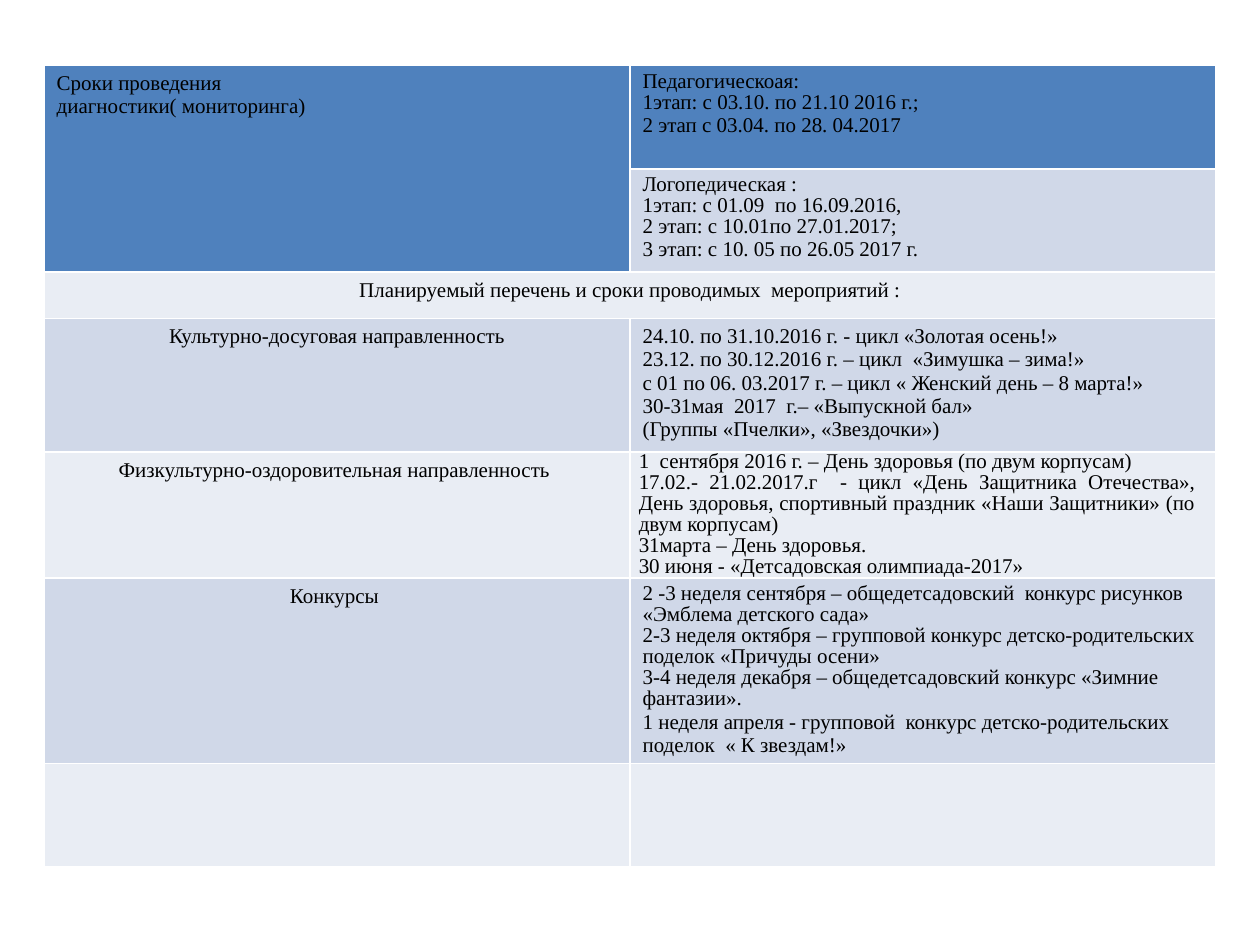
import pptx
import pptx.dml.color
import pptx.enum.text
import pptx.util

Inches = pptx.util.Inches
Pt = pptx.util.Pt
ALIGN = pptx.enum.text.PP_ALIGN
LEFT, CENTER, JUSTIFY = ALIGN.LEFT, ALIGN.CENTER, ALIGN.JUSTIFY
EXACT = Pt(12)
HEADER, DARK_BAND, LIGHT_BAND = "4F81BD", "D0D8E8", "E9EDF4"


def color(hex_string):
    return pptx.dml.color.RGBColor.from_string(hex_string)


presentation = pptx.Presentation()
presentation.slide_width = Inches(10)
presentation.slide_height = Inches(7.5)
slide = presentation.slides.add_slide(presentation.slide_layouts[6])

row_heights = [0.82, 0.82, 0.37, 1.06, 0.82, 0.82, 0.82]
# The default table style supplies the white borders and the thick header rule.
table = slide.shapes.add_table(
    len(row_heights), 2, Inches(0.35), Inches(0.52), Inches(9.3), Inches(sum(row_heights))
).table
for column in table.columns:
    column.width = Inches(4.65)
for row, height in zip(table.rows, row_heights):
    row.height = Inches(height)

for row_index in range(len(row_heights)):
    band = DARK_BAND if row_index % 2 else LIGHT_BAND
    for cell in table.rows[row_index].cells:
        cell.fill.solid()
        cell.fill.fore_color.rgb = color(band if row_index else HEADER)

table.cell(0, 0).merge(table.cell(1, 0))
table.cell(2, 0).merge(table.cell(2, 1))

# (row, column): paragraphs as (text, alignment, line spacing)
contents = {
    (0, 0): [
        ("Сроки проведения", LEFT, None),
        ("диагностики( мониторинга)", LEFT, None),
    ],
    (0, 1): [
        ("Педагогическоая:", JUSTIFY, EXACT),
        ("1этап: с 03.10. по 21.10 2016 г.;", JUSTIFY, EXACT),
        ("2 этап с 03.04. по 28. 04.2017", LEFT, None),
    ],
    (1, 1): [
        ("Логопедическая :", LEFT, EXACT),
        ("1этап: с 01.09  по 16.09.2016,", LEFT, EXACT),
        ("2 этап: с 10.01по 27.01.2017;", LEFT, EXACT),
        ("3 этап: с 10. 05 по 26.05 2017 г.", LEFT, None),
    ],
    (2, 0): [("Планируемый перечень и сроки проводимых  мероприятий :", CENTER, None)],
    (3, 0): [("Культурно-досуговая направленность", CENTER, None)],
    (3, 1): [
        ("24.10. по 31.10.2016 г. - цикл «Золотая осень!»", JUSTIFY, None),
        ("23.12. по 30.12.2016 г. – цикл  «Зимушка – зима!»", JUSTIFY, None),
        ("с 01 по 06. 03.2017 г. – цикл « Женский день – 8 марта!»", JUSTIFY, None),
        ("30-31мая  2017  г.– «Выпускной бал»", JUSTIFY, None),
        ("(Группы «Пчелки», «Звездочки»)", LEFT, None),
    ],
    (4, 0): [("Физкультурно-оздоровительная направленность ", CENTER, None)],
    (4, 1): [
        ("1  сентября 2016 г. – День здоровья (по двум корпусам)", JUSTIFY, EXACT),
        ("17.02.- 21.02.2017.г  - цикл «День Защитника Отечества»,  День здоровья, "
         "спортивный праздник «Наши Защитники» (по   двум корпусам)", JUSTIFY, EXACT),
        ("31марта – День здоровья.", JUSTIFY, EXACT),
        ("30 июня - «Детсадовская олимпиада-2017»", JUSTIFY, EXACT),
    ],
    (5, 0): [("Конкурсы ", CENTER, None)],
    (5, 1): [
        ("2 -3 неделя сентября – общедетсадовский  конкурс рисунков "
         "«Эмблема детского сада»", LEFT, EXACT),
        ("2-3 неделя октября – групповой конкурс детско-родительских "
         "поделок «Причуды осени»", LEFT, EXACT),
        ("3-4 неделя декабря – общедетсадовский конкурс «Зимние фантазии».", LEFT, EXACT),
        ("1 неделя апреля - групповой  конкурс детско-родительских "
         "поделок  « К звездам!»", LEFT, None),
    ],
}

for (row_index, column_index), paragraphs in contents.items():
    text_frame = table.cell(row_index, column_index).text_frame
    text_frame.text = "\n".join(text for text, _, _ in paragraphs)
    for paragraph, (_, alignment, spacing) in zip(text_frame.paragraphs, paragraphs):
        paragraph.alignment = alignment
        if spacing:
            paragraph.line_spacing = spacing
        for run in paragraph.runs:
            run.font.name = "Times New Roman"
            run.font.size = Pt(12)
            run.font.bold = False
            run.font.color.rgb = color("000000")

sports_cell = table.cell(4, 1)
sports_cell.margin_left = sports_cell.margin_right = Inches(0.07)
sports_cell.margin_top = sports_cell.margin_bottom = 0

presentation.save("out.pptx")
